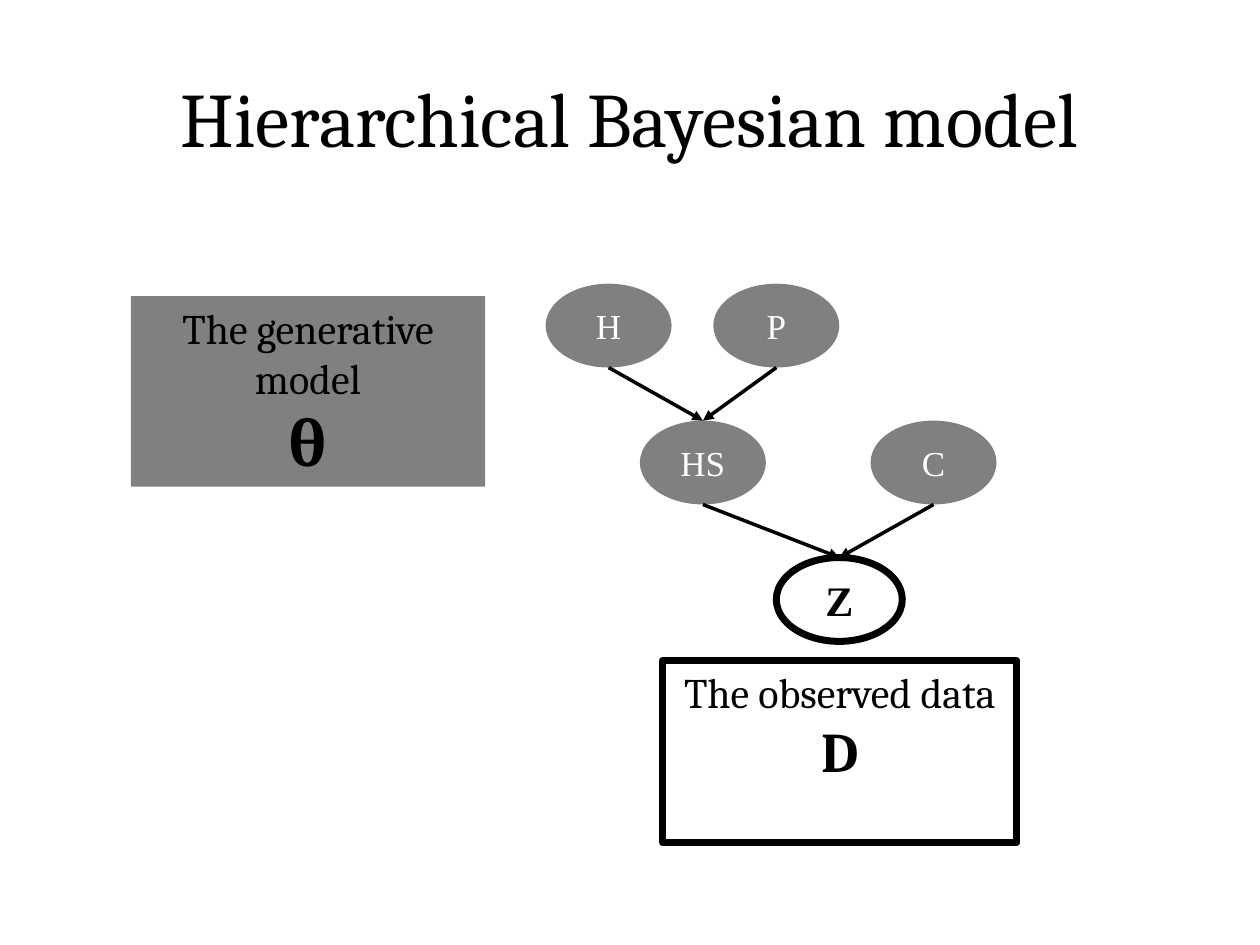
from pptx import Presentation
from pptx.dml.color import RGBColor
from pptx.enum.shapes import MSO_CONNECTOR, MSO_SHAPE
from pptx.enum.text import MSO_ANCHOR, PP_ALIGN
from pptx.oxml.ns import qn
from pptx.util import Cm, Pt
from lxml.etree import SubElement

COLORS = {"ink": "000000", "node": "808080", "light": "FFFFFF"}
SERIF, NODE_FONT = "Cambria", "Times New Roman"
NODE_W, NODE_H = 2.54, 1.69
ROW_TOP, ROW_STEP = 5.72, 2.76


class Deck:
    """Holds the style and the current slide, and draws each kind of element."""

    def __init__(self, prs):
        self.slide = prs.slides.add_slide(prs.slide_layouts[5])

    def color(self, name):
        return RGBColor.from_string(COLORS[name])

    def text(self, tf, lines, anchor, color="ink", font=SERIF):
        tf.word_wrap = True
        tf.vertical_anchor = anchor
        for i, (text, size, bold) in enumerate(lines):
            p = tf.add_paragraph() if i else tf.paragraphs[0]
            p.alignment = PP_ALIGN.CENTER
            r = p.add_run()
            r.text = text
            fmt = {"name": font, "size": Pt(size), "bold": bold}
            for key, value in fmt.items():
                setattr(r.font, key, value)
            r.font.color.rgb = self.color(color)

    def title(self, text, left, top, width, height):
        sp = self.slide.shapes.title
        box = {"left": left, "top": top, "width": width, "height": height}
        for key, value in box.items():
            setattr(sp, key, Cm(value))
        self.text(sp.text_frame, [(text, 44, False)], MSO_ANCHOR.MIDDLE)

    def shape(self, kind, left, top, width, height, filled):
        sp = self.slide.shapes.add_shape(kind, Cm(left), Cm(top), Cm(width), Cm(height))
        sp.shadow.inherit = False
        if filled:
            sp.fill.solid()
            sp.fill.fore_color.rgb = self.color("node")
            sp.line.fill.background()
        else:
            sp.fill.background()
            sp.line.color.rgb = self.color("ink")
            sp.line.width = Pt(4)
        return sp

    def panel(self, left, top, width, height, lines, filled):
        sp = self.shape(MSO_SHAPE.RECTANGLE, left, top, width, height, filled)
        self.text(sp.text_frame, lines, MSO_ANCHOR.TOP)

    def node(self, text, left, row, filled=True):
        top = ROW_TOP + row * ROW_STEP
        sp = self.shape(MSO_SHAPE.OVAL, left, top, NODE_W, NODE_H, filled)
        line = (text, 20, False) if filled else (text, 24, True)
        color = "light" if filled else "ink"
        self.text(sp.text_frame, [line], MSO_ANCHOR.MIDDLE, color, NODE_FONT)
        return sp

    def arrow(self, parent, child):
        s = self.slide.shapes.add_connector(
            MSO_CONNECTOR.STRAIGHT,
            parent.left + parent.width // 2, parent.top + parent.height,
            child.left + child.width // 2, child.top)
        s.line.color.rgb = self.color("ink")
        s.line.width = Pt(2)
        spPr = s._element.spPr
        SubElement(spPr.find(qn("a:ln")), qn("a:tailEnd"), type="triangle")
        SubElement(spPr, qn("a:effectLst"))


def main():
    prs = Presentation()
    prs.slide_width, prs.slide_height = Cm(25.4), Cm(19.05)
    deck = Deck(prs)
    deck.title("Hierarchical Bayesian model", 1.27, 0.76, 22.86, 3.18)
    deck.panel(13.36, 13.31, 7.14, 3.68,
               [("The observed data", 24, False), ("D", 32, True)], filled=False)
    deck.panel(2.64, 5.97, 7.14, 3.84,
               [("The generative model", 24, False), ("θ", 36, True)], filled=True)

    h = deck.node("H", 11, 0)
    hs = deck.node("HS", 12.9, 1)
    z = deck.node("Z", 15.65, 2, filled=False)
    p = deck.node("P", 14.38, 0)
    c = deck.node("C", 17.55, 1)
    for parent, child in [(h, hs), (p, hs), (c, z), (hs, z)]:
        deck.arrow(parent, child)
    prs.save("out.pptx")


if __name__ == "__main__":
    main()
